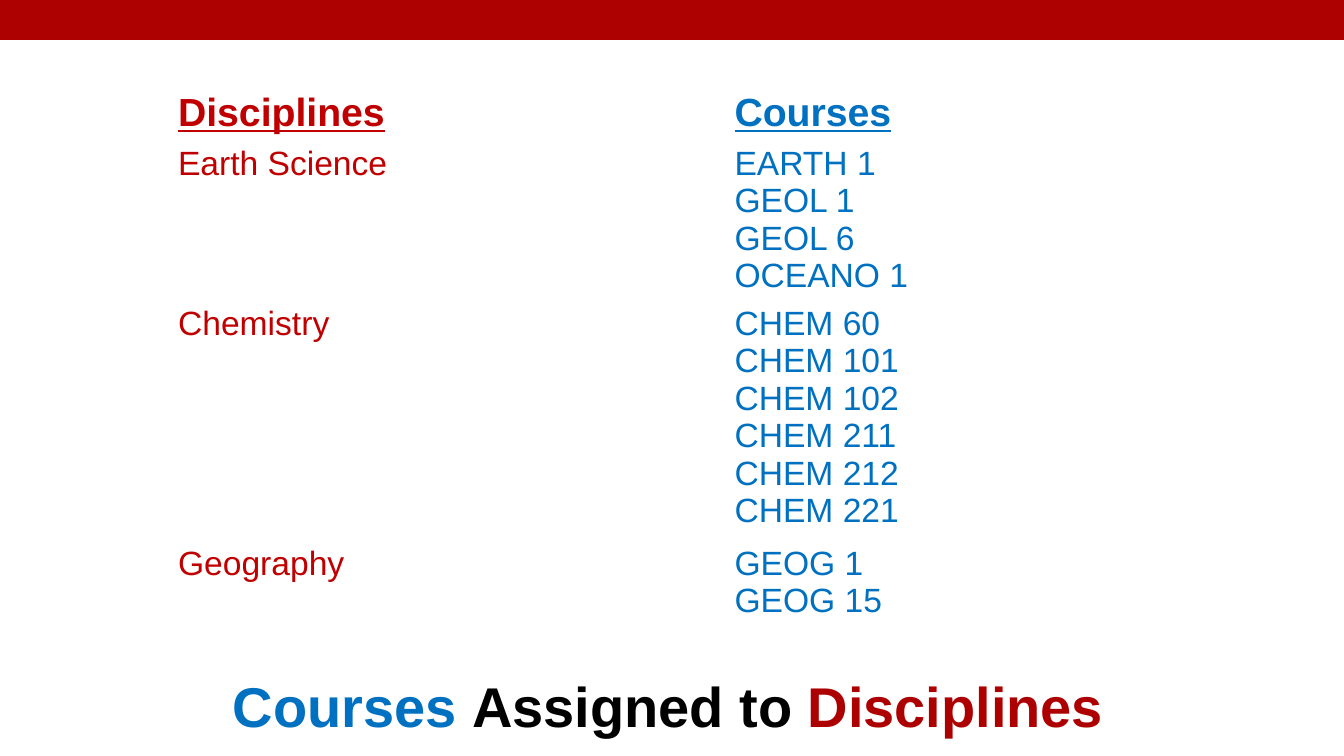
from pptx import Presentation
from pptx import util as u
from pptx.dml.color import RGBColor
from pptx.enum import shapes, text

SCALE = u.Inches(1) / 100.8
PAGE_WIDTH, PAGE_HEIGHT = 1344, 756
BAR_RED, RED, BLUE, BLACK = "AD0101", "C00000", "0070C0", "000000"

HEADINGS = ("Disciplines", "Courses")
COURSES = {
    "Earth Science": ["EARTH 1", "GEOL 1", "GEOL 6", "OCEANO 1"],
    "Chemistry": ["CHEM 60", "CHEM 101", "CHEM 102", "CHEM 211", "CHEM 212", "CHEM 221"],
    "Geography": ["GEOG 1", "GEOG 15"],
}


def px(length):
    return u.Emu(round(length * SCALE))


def colour(value):
    return RGBColor.from_string(value)


def add_span(para, words, size, value, bold=False, underline=False):
    span = para.add_run()
    span.text = words
    font = span.font
    font.name = "Arial"
    font.size = u.Pt(size)
    font.bold = bold
    font.underline = underline
    font.color.rgb = colour(value)


def set_margins(holder):
    holder.margin_left = holder.margin_right = u.Inches(0.1)
    holder.margin_top = holder.margin_bottom = u.Inches(0.05)


def add_bar(page, left, top, width, height):
    bar = page.shapes.add_shape(
        shapes.MSO_SHAPE.RECTANGLE, px(left), px(top), px(width), px(height))
    bar.shadow.inherit = False
    bar.fill.solid()
    bar.fill.fore_color.rgb = colour(BAR_RED)
    bar.line.fill.background()


def place_title(page, left, top, width, height):
    title = page.shapes.title
    title.left, title.top = px(left), px(top)
    title.width, title.height = px(width), px(height)
    frame = title.text_frame
    set_margins(frame)
    frame.word_wrap = True
    frame.auto_size = text.MSO_AUTO_SIZE.NONE
    frame.vertical_anchor = text.MSO_ANCHOR.BOTTOM
    para = frame.paragraphs[0]
    para.alignment = text.PP_ALIGN.CENTER
    for words, value in (("Courses ", BLUE), ("Assigned to ", BLACK), ("Disciplines", BAR_RED)):
        add_span(para, words, 40, value, bold=True)


def fill_cell(cell, lines, value, heading):
    set_margins(cell)
    cell.fill.background()
    for index, line in enumerate(lines):
        frame = cell.text_frame
        para = frame.add_paragraph() if index else frame.paragraphs[0]
        add_span(para, line, 28 if heading else 24, value, heading, heading)


def add_course_table(page, left, top, width, height):
    rows = [([HEADINGS[0]], [HEADINGS[1]])]
    rows += [([discipline], courses) for discipline, courses in COURSES.items()]
    table = page.shapes.add_table(
        len(rows), 2, px(left), px(top), px(width), px(height)).table
    table.first_row = table.horz_banding = False
    heading_height = 54
    line_height = (height - heading_height) / sum(map(len, COURSES.values()))
    for index, row in enumerate(rows):
        heading = index == 0
        table.rows[index].height = px(
            heading_height if heading else line_height * len(row[1]))
        for column, value in enumerate((RED, BLUE)):
            fill_cell(table.cell(index, column), row[column], value, heading)


def build_course_page(deck):
    page = deck.slides.add_slide(deck.slide_layouts[5])
    add_bar(page, 0, 0, PAGE_WIDTH, 40)
    place_title(page, 219, 666, 898, 78)
    add_course_table(page, 168, 86, 1113, 534)


def main():
    deck = Presentation()
    deck.slide_width, deck.slide_height = px(PAGE_WIDTH), px(PAGE_HEIGHT)
    build_course_page(deck)
    deck.save("out.pptx")


if __name__ == "__main__":
    main()
